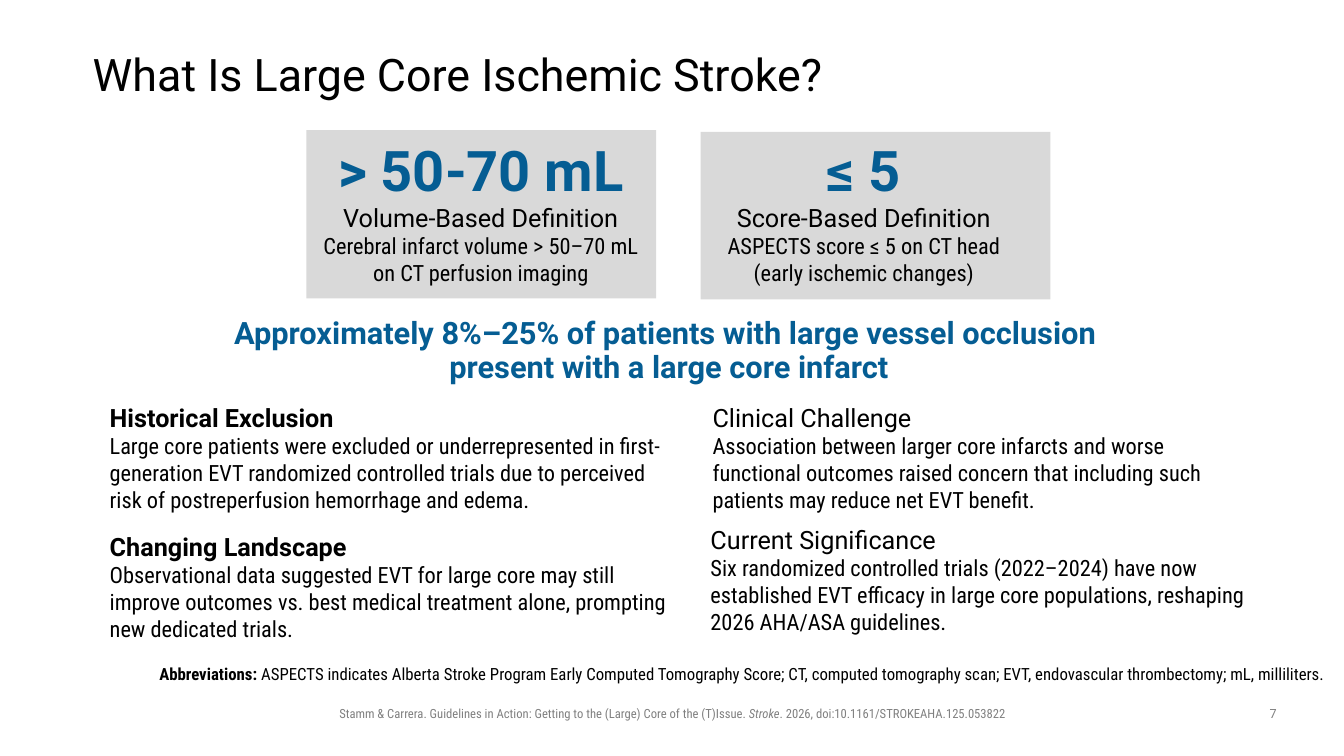
from dataclasses import dataclass

from pptx import Presentation
from pptx.dml.color import RGBColor
from pptx.enum.shapes import MSO_SHAPE as Shape
from pptx.enum.text import MSO_ANCHOR as Anchor, MSO_AUTO_SIZE as AutoSize, PP_ALIGN as Align
from pptx.slide import Slide
from pptx.util import Inches, Pt

# Grid: ten columns and ten rows to the inch
CELL = Inches(0.1)
SLIDE_COLS, SLIDE_ROWS = 133.33, 75
COLORS = {"ink": "000000", "blue": "055D93", "panel": "D9D9D9", "muted": "808080"}
SANS, CONDENSED = "Roboto", "Roboto Condensed"
DEFAULT_INSETS = (1, 0.5, 1, 0.5)
FLUSH_LEFT = (0, 0.5, 1, 0.5)


@dataclass(frozen=True)
class Area:
    col: float
    row: float
    cols: float
    rows: float

    def lengths(self) -> list[int]:
        return [round(n * CELL) for n in (self.col, self.row, self.cols, self.rows)]


@dataclass(frozen=True)
class Span:
    text: str
    bold: bool | None = None
    italic: bool | None = None


@dataclass(frozen=True)
class Line:
    spans: tuple[Span, ...]
    size: float
    face: str = SANS
    color: str = "ink"
    bold: bool = False
    align: Align = Align.LEFT
    spacing: float | None = None


@dataclass(frozen=True)
class Definition:
    panel: Area
    words: Area
    threshold: str
    heading: str
    detail: str


@dataclass(frozen=True)
class Topic:
    area: Area
    heading: str
    detail: str
    bold: bool


def add_words(slide: Slide, area: Area, lines: list[Line], insets: tuple = DEFAULT_INSETS,
              anchor: Anchor = Anchor.TOP, auto_size: AutoSize = AutoSize.NONE) -> None:
    frame = slide.shapes.add_textbox(*area.lengths()).text_frame
    frame.word_wrap, frame.auto_size, frame.vertical_anchor = True, auto_size, anchor
    (frame.margin_left, frame.margin_top,
     frame.margin_right, frame.margin_bottom) = [round(n * CELL) for n in insets]
    for index, line in enumerate(lines):
        paragraph = frame.add_paragraph() if index else frame.paragraphs[0]
        paragraph.alignment = line.align
        if line.spacing:
            paragraph.line_spacing = line.spacing
        font = paragraph.font
        font.size, font.name, font.bold = Pt(line.size), line.face, line.bold
        font.color.rgb = RGBColor.from_string(COLORS[line.color])
        for span in line.spans:
            for number, part in enumerate(span.text.split("\n")):
                if number:
                    paragraph.add_line_break()
                run = paragraph.add_run()
                run.text = part
                run.font.bold, run.font.italic = span.bold, span.italic


def heading_and_detail(heading: str, detail: str, bold: bool = False,
                       align: Align = Align.LEFT) -> list[Line]:
    return [Line((Span(heading),), 18, bold=bold, align=align),
            Line((Span(detail),), 16, CONDENSED, align=align)]


def add_panel(slide: Slide, area: Area) -> None:
    panel = slide.shapes.add_shape(Shape.RECTANGLE, *area.lengths())
    panel.shadow.inherit = False
    panel.fill.solid()
    panel.fill.fore_color.rgb = RGBColor.from_string(COLORS["panel"])
    panel.line.fill.background()


def add_definition(slide: Slide, item: Definition) -> None:
    add_panel(slide, item.panel)
    threshold = Line((Span(item.threshold),), 40, color="blue", bold=True, align=Align.CENTER)
    add_words(slide, item.words,
              [threshold, *heading_and_detail(item.heading, item.detail, align=Align.CENTER)],
              auto_size=AutoSize.SHAPE_TO_FIT_TEXT)


DEFINITIONS = [
    Definition(Area(30.4, 12.9, 34.7, 16.7), Area(31, 12.9, 33.4, 16.2),
               "> 50-70 mL", "Volume-Based Definition",
               "Cerebral infarct volume > 50–70 mL on CT perfusion imaging"),
    Definition(Area(69.5, 13.1, 34.7, 16.6), Area(69, 12.9, 33.4, 16.2),
               "≤ 5", "Score-Based Definition",
               "ASPECTS score ≤ 5 on CT head (early ischemic changes)"),
]

TOPICS = [
    Topic(Area(9.9, 39.4, 56.7, 12.1), "Historical Exclusion",
          "Large core patients were excluded or underrepresented in first-generation EVT "
          "randomized controlled trials due to perceived risk of postreperfusion hemorrhage "
          "and edema.", True),
    Topic(Area(69.7, 39.4, 53.8, 12.1), "Clinical Challenge",
          "Association between larger core infarcts and worse functional outcomes raised "
          "concern that including such patients may reduce net EVT benefit.", False),
    Topic(Area(9.9, 52.2, 59.1, 12.1), "Changing Landscape",
          "Observational data suggested EVT for large core may still improve outcomes vs. "
          "best medical treatment alone, prompting new dedicated trials.", True),
    Topic(Area(69.5, 51.5, 56.2, 12.1), "Current Significance",
          "Six randomized controlled trials (2022–2024) have now established EVT efficacy in "
          "large core populations, reshaping 2026 AHA/ASA guidelines.", False),
]


def main() -> None:
    deck = Presentation()
    deck.slide_width, deck.slide_height = round(SLIDE_COLS * CELL), SLIDE_ROWS * CELL
    slide = deck.slides.add_slide(deck.slide_layouts[6])

    # Title
    add_words(slide, Area(9.2, 4, 115, 7.2),
              [Line((Span("What Is Large Core Ischemic Stroke?"),), 32, spacing=0.9)],
              insets=(0, 0, 0, 0), anchor=Anchor.MIDDLE)

    # Definitions and prevalence
    for definition in DEFINITIONS:
        add_definition(slide, definition)
    prevalence = Span("Approximately 8%–25% of patients with large vessel occlusion \n"
                      "present with a large core infarct")
    add_words(slide, Area(9.5, 31.1, 114.7, 7.7),
              [Line((prevalence,), 22, color="blue", bold=True, align=Align.CENTER, spacing=0.9)],
              insets=FLUSH_LEFT, auto_size=AutoSize.SHAPE_TO_FIT_TEXT)

    # Background topics
    for topic in TOPICS:
        add_words(slide, topic.area, heading_and_detail(topic.heading, topic.detail, topic.bold),
                  auto_size=AutoSize.SHAPE_TO_FIT_TEXT)

    # Abbreviations
    abbreviations = (
        Span("Abbreviations:", bold=True),
        Span(" ASPECTS indicates Alberta Stroke Program Early Computed Tomography Score; "
             "CT, computed tomography scan; EVT, endovascular thrombectomy; mL, milliliters."))
    add_words(slide, Area(15, 64.7, 118.3, 3.7),
              [Line(abbreviations, 12, CONDENSED, align=Align.CENTER, spacing=0.9)],
              insets=FLUSH_LEFT, anchor=Anchor.BOTTOM)

    # Citation and page number
    citation = (
        Span("Stamm & Carrera. Guidelines in Action: Getting to the (Large) Core of the (T)Issue. "),
        Span("Stroke", italic=True),
        Span(". 2026, doi:10.1161/STROKEAHA.125.053822"))
    add_words(slide, Area(23.6, 69.5, 86.2, 2.5),
              [Line(citation, 9, CONDENSED, "muted", align=Align.CENTER)],
              auto_size=AutoSize.SHAPE_TO_FIT_TEXT)
    add_words(slide, Area(124.2, 69.5, 4.2, 2.6),
              [Line((Span("7"),), 9, color="muted", align=Align.CENTER)])

    deck.save("out.pptx")


if __name__ == "__main__":
    main()
